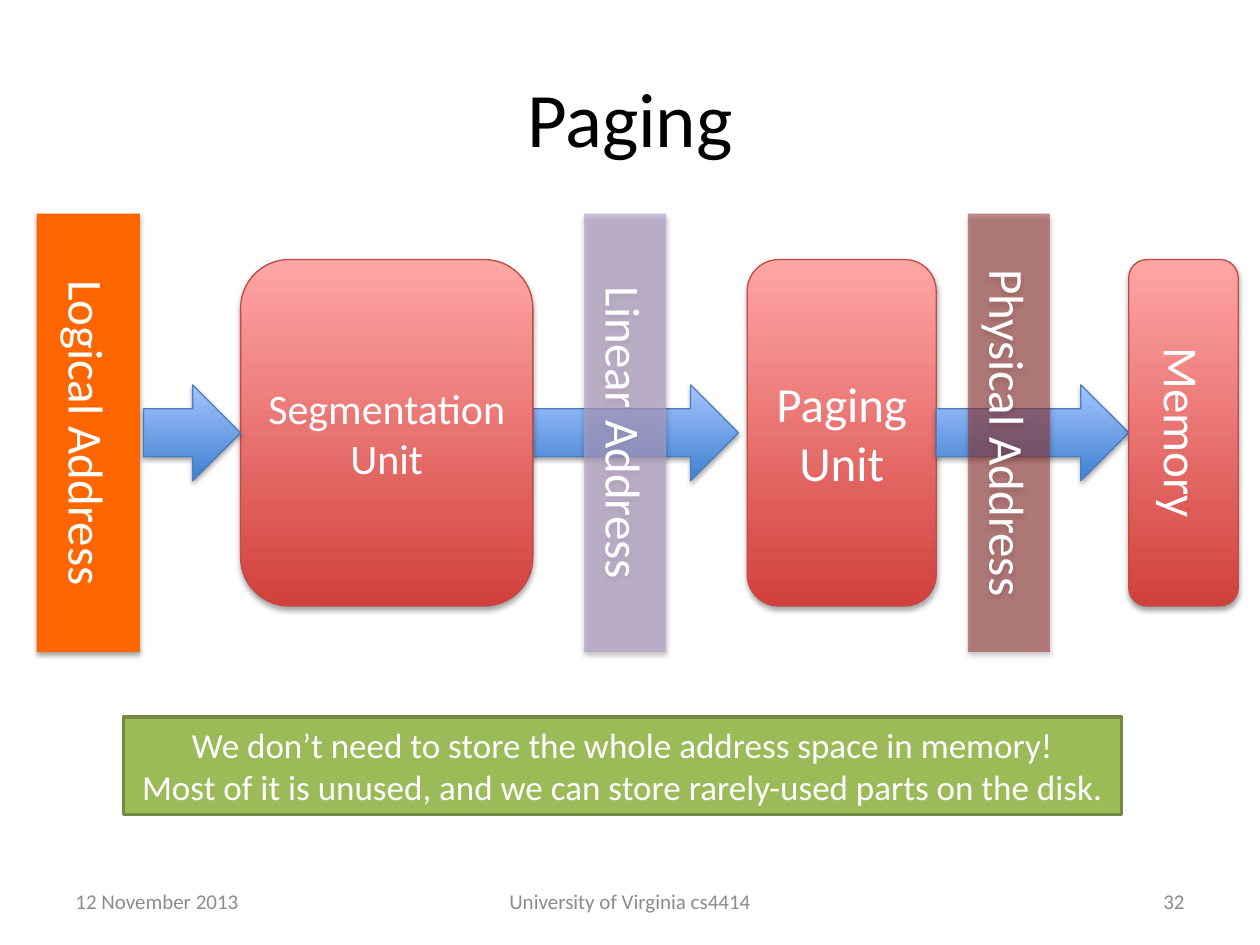
import pptx
import pptx.util
import pptx.dml.color
import pptx.enum.shapes
import pptx.enum.text
from lxml import etree

Pt = pptx.util.Pt
Kind = pptx.enum.shapes.MSO_SHAPE
Align = pptx.enum.text.PP_ALIGN
Anchor = pptx.enum.text.MSO_ANCHOR

COLORS = {
    "title": "000000", "footer": "8C8C8C", "label": "FFFFFF",
    "logical": "FF6600", "linear": "B3A2C7", "physical": "953735",
    "unit_dark": "D1403C", "unit_light": "FFA6A5", "unit_line": "BF4C48",
    "flow_dark": "3F80CE", "flow_light": "A4C4FF", "flow_line": "4B7EBC",
    "note": "9BBB59", "note_line": "738A42",
}
DRAWING = "http://schemas.openxmlformats.org/drawingml/2006/main"
MIDLINE = 247.3
BAR_LENGTH = 250.6
UNIT_HEIGHT = 198
FLOW_HEIGHT = 54.8


def rgb(name):
    return pptx.dml.color.RGBColor.from_string(COLORS[name])


def add_element(parent, tag, **attributes):
    return etree.SubElement(parent, f"{{{DRAWING}}}{tag}", attributes)


def write(frame, lines, size, color, align=Align.CENTER):
    frame.vertical_anchor = Anchor.MIDDLE
    for index, line in enumerate(lines):
        paragraph = frame.paragraphs[0] if index == 0 else frame.add_paragraph()
        paragraph.alignment = align
        run = paragraph.add_run()
        run.text = line
        run.font.name = "Calibri"
        run.font.size = Pt(size)
        run.font.color.rgb = rgb(color)


def add_block(slide, kind, left, top, width, height):
    block = slide.shapes.add_shape(kind, Pt(left), Pt(top), Pt(width), Pt(height))
    block.shadow.inherit = False
    return block


def set_line(block, color, width):
    block.line.color.rgb = rgb(color)
    block.line.width = Pt(width)


def cast_shadow(block):
    effects = block._element.spPr.find(f"{{{DRAWING}}}effectLst")
    shadow = add_element(effects, "outerShdw", blurRad=str(Pt(3.1)), dist=str(Pt(1.8)),
                         dir="5400000", rotWithShape="0")
    add_element(add_element(shadow, "srgbClr", val="000000"), "alpha", val="35000")


def add_glossy(slide, kind, left, width, height, family):
    block = add_block(slide, kind, left, MIDLINE - height / 2, width, height)
    block.fill.gradient()
    block.fill.gradient_angle = 90
    for stop, shade in zip(block.fill.gradient_stops, ("dark", "light")):
        stop.color.rgb = rgb(f"{family}_{shade}")
    set_line(block, f"{family}_line", 0.75)
    cast_shadow(block)
    return block


def add_flow(slide, left, right):
    add_glossy(slide, Kind.RIGHT_ARROW, left, right - left, FLOW_HEIGHT, "flow")


def add_unit(slide, left, width, lines, size=28, vertical=False):
    unit = add_glossy(slide, Kind.ROUNDED_RECTANGLE, left, width, UNIT_HEIGHT, "unit")
    write(unit.text_frame, lines, size, "label")
    if vertical:
        unit.text_frame._txBody.bodyPr.set("vert", "vert")


def add_address(slide, center, thickness, label, color, opacity=100):
    bar = add_block(slide, Kind.RECTANGLE, center - BAR_LENGTH / 2,
                    MIDLINE - thickness / 2, BAR_LENGTH, thickness)
    bar.rotation = 90
    bar.fill.solid()
    bar.fill.fore_color.rgb = rgb(color)
    if opacity < 100:
        fill_color = bar._element.spPr.find(f".//{{{DRAWING}}}srgbClr")
        add_element(fill_color, "alpha", val=str(opacity * 1000))
    bar.line.fill.background()
    cast_shadow(bar)
    write(bar.text_frame, [label], 28, "label")


def add_note(slide, lines):
    note = add_block(slide, Kind.RECTANGLE, 70.6, 409.7, 570.2, 55.7)
    note.fill.solid()
    note.fill.fore_color.rgb = rgb("note")
    set_line(note, "note_line", 2)
    write(note.text_frame, lines, 20, "label")
    note.text_frame.word_wrap = False


def add_footer(slide, left, width, text, align):
    footer = slide.shapes.add_textbox(Pt(left), Pt(500.5), Pt(width), Pt(28.75))
    footer.text_frame.word_wrap = True
    write(footer.text_frame, [text], 12, "footer", align)


def add_title(slide, text):
    title = slide.shapes.title
    title.left, title.top, title.width, title.height = Pt(36), Pt(21.6), Pt(648), Pt(90)
    write(title.text_frame, [text], 44, "title")


def main():
    deck = pptx.Presentation()
    deck.slide_width, deck.slide_height = Pt(720), Pt(540)
    slide = deck.slides.add_slide(deck.slide_layouts[5])

    add_title(slide, "Paging")
    add_footer(slide, 36, 168, "12 November 2013", Align.LEFT)
    add_footer(slide, 246, 228, "University of Virginia cs4414", Align.CENTER)
    add_footer(slide, 516, 168, "32", Align.RIGHT)

    add_address(slide, 50.4, 59, "Logical Address", "logical")
    add_flow(slide, 304.6, 422)
    add_unit(slide, 137.5, 167, ["Segmentation Unit"], size=24)
    add_address(slide, 357.2, 46.8, "Linear Address", "linear", opacity=66)
    add_unit(slide, 427, 108, ["Paging", "Unit"])
    add_flow(slide, 82, 137.5)
    add_flow(slide, 535, 645)
    add_address(slide, 576.5, 46.8, "Physical Address", "physical", opacity=57)
    add_unit(slide, 645, 62.6, ["Memory"], vertical=True)

    add_note(slide, [
        "We don’t need to store the whole address space in memory!",
        "Most of it is unused, and we can store rarely-used parts on the disk.",
    ])
    deck.save("out.pptx")


if __name__ == "__main__":
    main()
